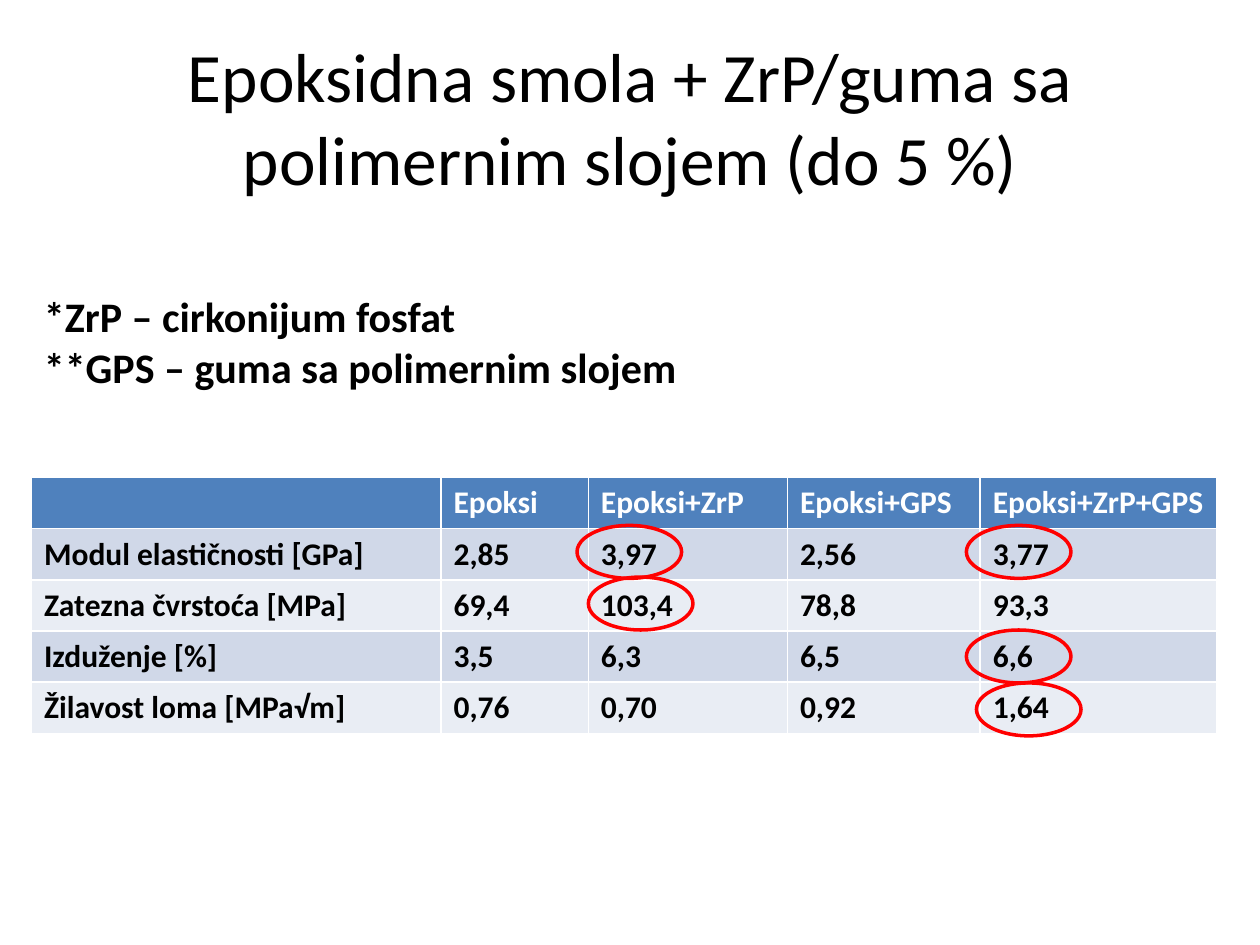
import pptx
import pptx.util
import pptx.dml.color
import pptx.enum.shapes
import pptx.enum.text

Inches = pptx.util.Inches
RGB = pptx.dml.color.RGBColor.from_string

THEME = {
    "font": "Calibri",
    "text": RGB("000000"),
    "header_text": RGB("FFFFFF"),
    "header": RGB("4F81BD"),
    "bands": [RGB("D0D8E8"), RGB("E9EDF4")],
    "mark": RGB("FF0000"),
    "title_size": 39.6,
    "note_size": 24,
    "table_size": 18,
    "mark_width": 2,
}


def write(p, text, size, color, bold=True):
    r = p.add_run()
    r.text = text
    formats = {"name": THEME["font"], "size": pptx.util.Pt(size), "bold": bold}
    for key, value in formats.items():
        setattr(r.font, key, value)
    r.font.color.rgb = color


def place(sp, left, top, width, height):
    box = {"left": left, "top": top, "width": width, "height": height}
    for key, value in box.items():
        setattr(sp, key, Inches(value))


prs = pptx.Presentation()
prs.slide_width, prs.slide_height = Inches(10), Inches(7.5)
s = prs.slides.add_slide(prs.slide_layouts[5])

title = s.shapes.title
place(title, 0.5, 0.3, 9, 1.25)
tf = title.text_frame
tf.auto_size = pptx.enum.text.MSO_AUTO_SIZE.NONE
tf.vertical_anchor = pptx.enum.text.MSO_ANCHOR.MIDDLE
p = tf.paragraphs[0]
p.alignment = pptx.enum.text.PP_ALIGN.CENTER
write(p, "Epoksidna smola + ZrP/guma sa polimernim slojem (do 5 %)",
      THEME["title_size"], THEME["text"], False)

rows = [
    ["", "Epoksi", "Epoksi+ZrP", "Epoksi+GPS", "Epoksi+ZrP+GPS"],
    ["Modul elastičnosti [GPa]", "2,85", "3,97", "2,56", "3,77"],
    ["Zatezna čvrstoća [MPa]", "69,4", "103,4", "78,8", "93,3"],
    ["Izduženje [%]", "3,5", "6,3", "6,5", "6,6"],
    ["Žilavost loma [MPa√m]", "0,76", "0,70", "0,92", "1,64"],
]
widths = [3.25, 1.17, 1.58, 1.53, 1.88]
table = s.shapes.add_table(len(rows), len(widths), Inches(0.25), Inches(3.79),
                           Inches(sum(widths)), Inches(2.03)).table
for column, width in zip(table.columns, widths):
    column.width = Inches(width)
for i, row in enumerate(rows):
    fill = THEME["bands"][(i - 1) % 2] if i else THEME["header"]
    color = THEME["text"] if i else THEME["header_text"]
    for j, text in enumerate(row):
        cell = table.cell(i, j)
        cell.fill.solid()
        cell.fill.fore_color.rgb = fill
        if text:
            write(cell.text_frame.paragraphs[0], text, THEME["table_size"], color)

notes = s.shapes.add_textbox(Inches(0.25), Inches(2.26), Inches(8.25), Inches(0.91))
tf = notes.text_frame
tf.word_wrap = True
tf.auto_size = pptx.enum.text.MSO_AUTO_SIZE.SHAPE_TO_FIT_TEXT
for i, text in enumerate(["*ZrP – cirkonijum fosfat", "**GPS – guma sa polimernim slojem"]):
    p = tf.add_paragraph() if i else tf.paragraphs[0]
    write(p, text, THEME["note_size"], THEME["text"])

for left, top in [(4.67, 4.58), (7.75, 5.42), (7.67, 5), (4.58, 4.17), (7.67, 4.17)]:
    mark = s.shapes.add_shape(pptx.enum.shapes.MSO_SHAPE.OVAL, Inches(left), Inches(top),
                              Inches(0.83), Inches(0.42))
    mark.shadow.inherit = False
    mark.fill.background()
    mark.line.color.rgb = THEME["mark"]
    mark.line.width = pptx.util.Pt(THEME["mark_width"])

prs.save("out.pptx")
